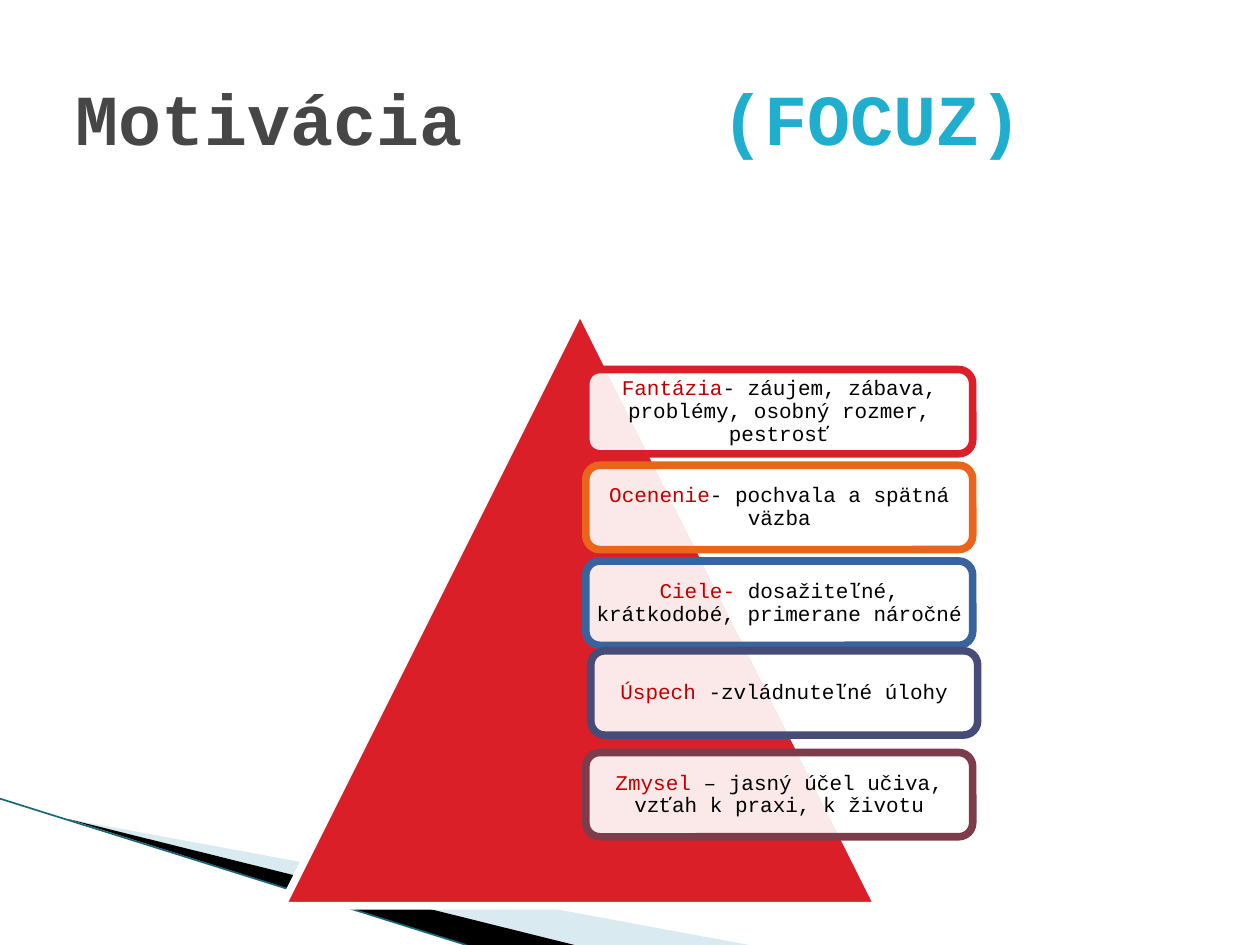
from lxml.etree import SubElement as Sub
from pptx import Presentation as Deck
from pptx.dml.color import RGBColor as Rgb
from pptx.enum.shapes import MSO_CONNECTOR as Link, MSO_SHAPE as Kind
from pptx.enum.text import MSO_ANCHOR as Anchor, PP_ALIGN as Align
from pptx.oxml.ns import qn
from pptx.util import Cm, Pt

FACE = "Courier New"
CARDS = [
    ("DA1F28", "Fantázia", "- záujem, zábava, problémy, osobný rozmer, pestrosť", 0, 0),
    ("EB641B", "Ocenenie", "- pochvala a spätná väzba", 0, 0),
    ("39639D", "Ciele-", " dosažiteľné, krátkodobé, primerane náročné", 0, 0),
    ("474B78", "Úspech", " -zvládnuteľné úlohy", 0.1, -0.12),
    ("7D3C4A", "Zmysel", " – jasný účel učiva, vzťah k praxi, k životu", 0, 0),
]


def tint(fmt, hue, alpha=None):
    """Fill a shape or line solidly, with an optional opacity in percent."""
    fmt.fill.solid()
    fmt.fill.fore_color.rgb = Rgb.from_string(hue)
    if alpha is not None:
        node = fmt.fill._xPr.find(qn("a:solidFill"))[0]
        Sub(node, qn("a:alpha"), val=str(alpha * 1000))


def put(item, **vals):
    """Set each named format value on an item."""
    for name, val in vals.items():
        setattr(item, name, val)


def write(para, text, size, hue, bold=False):
    """Add one coloured run to a paragraph."""
    run = para.add_run()
    run.text = text
    put(run.font, name=FACE, size=Pt(size), bold=bold)
    tint(run.font, hue)


def block(slide, kind, box, fill, edge, alpha=None):
    """Place a filled and thickly outlined preset shape."""
    shape = slide.shapes.add_shape(kind, *map(Cm, box))
    shape.shadow.inherit = False
    tint(shape, fill, alpha)
    tint(shape.line, edge)
    shape.line.width = Pt(4.33)
    return shape


def wedge(slide, points, hue, alpha=None):
    """Draw a closed polygon without an outline."""
    start, *rest = [(Cm(x), Cm(y)) for x, y in points]
    pen = slide.shapes.build_freeform(*start)
    pen.add_line_segments(rest, close=True)
    shape = pen.convert_to_shape()
    shape.shadow.inherit = False
    tint(shape, hue, alpha)
    shape.line.fill.background()


def sweep(slide, x, y, wide, high):
    """Draw the corner wedges and their edge line."""
    base = y + high
    tip = (x + 1.37, y + 0.41)
    wedge(slide, [tip, (x + wide, base), (x + 11.58, base)], "A0CBDC", 40)
    wedge(slide, [tip, (x + 11.58, base), (x + 9.4, base)], "000000")
    edge = slide.shapes.add_connector(Link.STRAIGHT, Cm(x), Cm(y), Cm(x + 9.4), Cm(base))
    tint(edge.line, "17697A")
    edge.line.width = Pt(0.95)
    Sub(edge._element.spPr, qn("a:effectLst"))


def title(slide, x, y, wide, high):
    """Write the heading with its second part at a tab stop."""
    frame = slide.shapes.add_textbox(*map(Cm, (x, y, wide, high))).text_frame
    put(frame, word_wrap=True, vertical_anchor=Anchor.MIDDLE)
    para = frame.paragraphs[0]
    tabs = Sub(para._p.get_or_add_pPr(), qn("a:tabLst"))
    Sub(tabs, qn("a:tab"), pos=str(Cm(13.02)), algn="l")
    write(para, "Motivácia\t", 41, "464646", True)
    write(para, "(FOCUZ)", 41, "1FAECD", True)


def card(slide, box, edge, term, text):
    """Place one rounded card with a red term and its text."""
    frame = block(slide, Kind.ROUNDED_RECTANGLE, box, "FFFFFF", edge, 90).text_frame
    sides = ("margin_left", "margin_right", "margin_top", "margin_bottom")
    put(frame, word_wrap=True, vertical_anchor=Anchor.MIDDLE,
        **dict.fromkeys(sides, Cm(0.13)))
    para = frame.paragraphs[0]
    put(para, alignment=Align.CENTER, line_spacing=0.9)
    write(para, term, 12, "C00000")
    write(para, text, 12, "000000")


def pyramid(slide, x, y, side):
    """Draw the triangle and the column of cards over it."""
    block(slide, Kind.ISOSCELES_TRIANGLE, (x, y, side, side), "DA1F28", "FFFFFF")
    for i, (edge, term, text, dx, dy) in enumerate(CARDS):
        box = (x + 6.12 + dx, y + 1.2 + 1.93 * i + dy, 7.8, 1.7)
        card(slide, box, edge, term, text)


def main():
    """Build and save the slide."""
    deck = Deck()
    put(deck, slide_width=Cm(25.4), slide_height=Cm(19.05))
    slide = deck.slides.add_slide(deck.slide_layouts[6])
    sweep(slide, 0, 16.1, 15.1, 2.95)
    title(slide, 1.27, 0.76, 22.86, 3.18)
    pyramid(slide, 5.69, 6.25, 12.01)
    deck.save("out.pptx")


if __name__ == "__main__":
    main()
